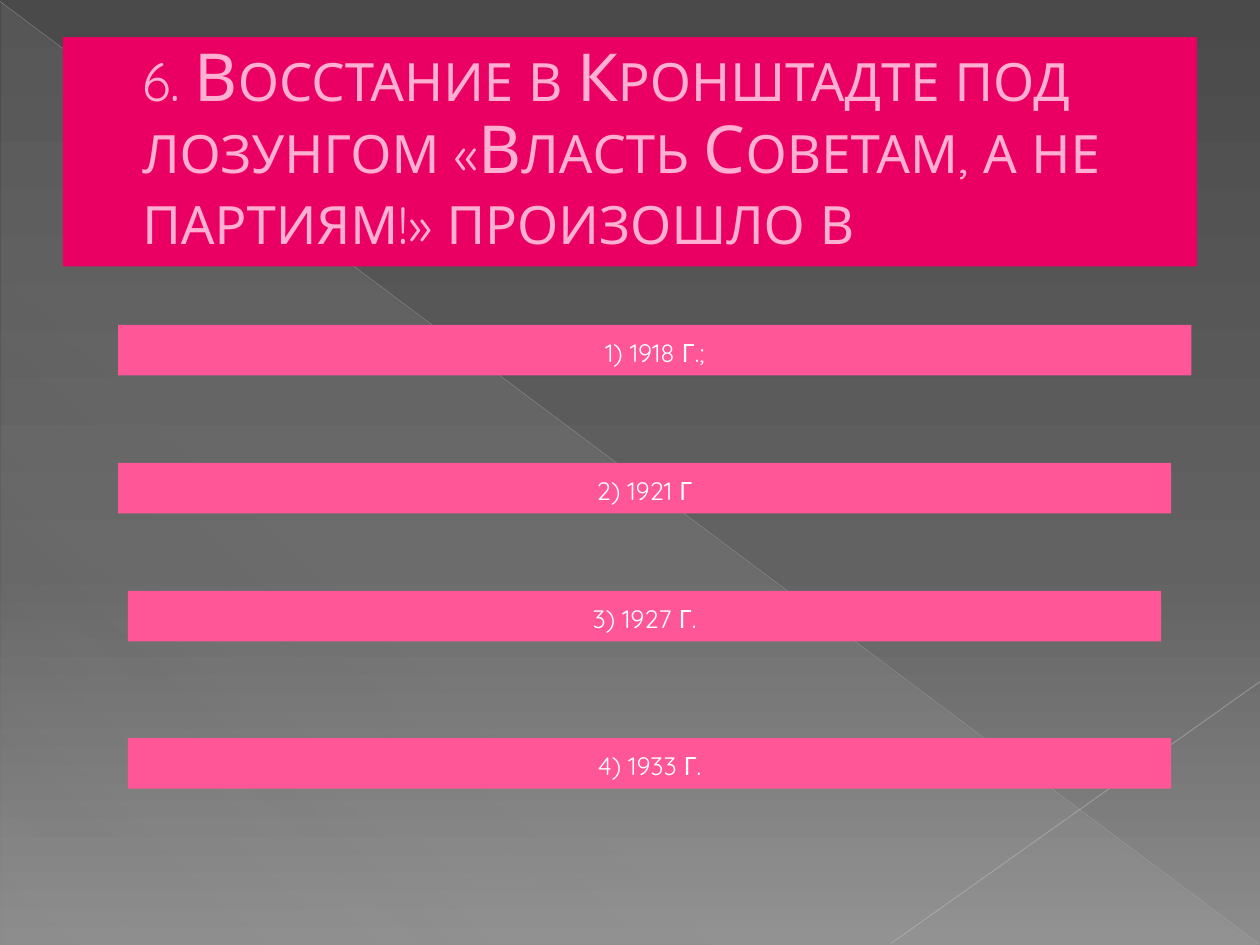
"""Build a quiz slide with a question banner and four answer bars."""
from typing import NamedTuple

from lxml.etree import SubElement
from pptx import Presentation
from pptx.dml.color import RGBColor
from pptx.enum.shapes import MSO_CONNECTOR, MSO_SHAPE
from pptx.enum.text import MSO_ANCHOR as Anchor, PP_ALIGN as Align
from pptx.oxml import parse_xml
from pptx.oxml.ns import nsdecls, qn
from pptx.util import Cm, Pt


class Stop(NamedTuple):
    position: int
    color: str
    opacity: int = 100


class Bar(NamedTuple):
    text: str
    left: float
    top: float
    width: float
    height: float = 1.02
    fill: str = "FF5698"
    color: str = "FFFFFF"
    size: float = 18
    align: Align = Align.CENTER
    anchor: Anchor = Anchor.TOP
    indent: float = 0
    spacing: float = 1


class Ray(NamedTuple):
    start: tuple[float, float]
    end: tuple[float, float]
    color: str
    width: float
    opacity: int


BACKDROP = [Stop(0, "4A4A4A"), Stop(60, "626262"), Stop(100, "8C8C8C")]
SHEEN = [Stop(0, "D2D2D2", 10), Stop(70, "D2D2D2", 8), Stop(100, "D2D2D2", 1)]
RAYS = [
    Ray((0, 0.03), (25.37, 19.02), "BFBFBF", 0.39, 35),
    Ray((25.4, 13.74), (17.96, 19.02), "C6C6C6", 0.47, 45),
]
BARS = [
    Bar("6. Восстание в Кронштадте под лозунгом «Власть Советам, а не партиям!» произошло в",
        1.27, 0.75, 22.86, 4.62, "E90062", "FFAFD1", 37.8,
        Align.LEFT, Anchor.MIDDLE, 1.35, 0.9),
    Bar("1) 1918 г.;", 2.38, 6.55, 21.64),
    Bar("2) 1921 г", 2.38, 9.33, 21.23),
    Bar("3) 1927 г.", 2.58, 11.91, 20.83),
    Bar("4) 1933 г.", 2.58, 14.88, 21.03),
]


def paint(fill, color: str, opacity: int = 100) -> None:
    fill.solid()
    fill.fore_color.rgb = RGBColor.from_string(color)
    if opacity < 100:
        tint = fill._xPr.find(qn("a:solidFill"))[0]
        SubElement(tint, qn("a:alpha"), val=str(opacity * 1000))


def paint_gradient(fill, stops: list[Stop], angle: int) -> None:
    paint(fill, stops[0].color)
    stop_xml = "".join(
        f'<a:gs pos="{stop.position * 1000}"><a:srgbClr val="{stop.color}">'
        f'<a:alpha val="{stop.opacity * 1000}"/></a:srgbClr></a:gs>'
        for stop in stops
    )
    gradient = parse_xml(
        f'<a:gradFill {nsdecls("a")} rotWithShape="1"><a:gsLst>{stop_xml}</a:gsLst>'
        f'<a:lin ang="{angle * 60000}" scaled="0"/></a:gradFill>'
    )
    parent = fill._xPr
    parent.replace(parent.find(qn("a:solidFill")), gradient)


def add_plain_shape(slide, kind: MSO_SHAPE, left: float, top: float,
                    width: float, height: float):
    shape = slide.shapes.add_shape(kind, Cm(left), Cm(top), Cm(width), Cm(height))
    shape.shadow.inherit = False
    shape.line.fill.background()
    return shape


def add_ray(slide, ray: Ray) -> None:
    points = [Cm(value) for value in ray.start + ray.end]
    connector = slide.shapes.add_connector(MSO_CONNECTOR.STRAIGHT, *points)
    connector.line.width = Pt(ray.width)
    paint(connector.line.fill, ray.color, ray.opacity)
    SubElement(connector._element.spPr, qn("a:effectLst"))


def add_bar(slide, bar: Bar) -> None:
    shape = add_plain_shape(slide, MSO_SHAPE.RECTANGLE, bar.left, bar.top,
                            bar.width, bar.height)
    paint(shape.fill, bar.fill)
    frame = shape.text_frame
    frame.word_wrap = True
    frame.vertical_anchor = bar.anchor
    paragraph = frame.paragraphs[0]
    paragraph.text = bar.text
    paragraph.alignment = bar.align
    paragraph.line_spacing = bar.spacing
    paragraph._p.pPr.set("marL", str(Cm(bar.indent)))
    font = paragraph.font
    font.name = "Quicksand"
    font.size = Pt(bar.size)
    paint(font.fill, bar.color)
    paragraph._p.pPr.find(qn("a:defRPr")).set("cap", "small")


def main() -> None:
    presentation = Presentation()
    presentation.slide_width, presentation.slide_height = Cm(25.4), Cm(19.05)
    slide = presentation.slides.add_slide(presentation.slide_layouts[6])
    paint_gradient(slide.background.fill, BACKDROP, 90)
    triangle = add_plain_shape(slide, MSO_SHAPE.RIGHT_TRIANGLE, 0.03, 0.05, 25.35, 19)
    paint_gradient(triangle.fill, SHEEN, 133)
    for ray in RAYS:
        add_ray(slide, ray)
    for bar in BARS:
        add_bar(slide, bar)
    presentation.save("out.pptx")


if __name__ == "__main__":
    main()
